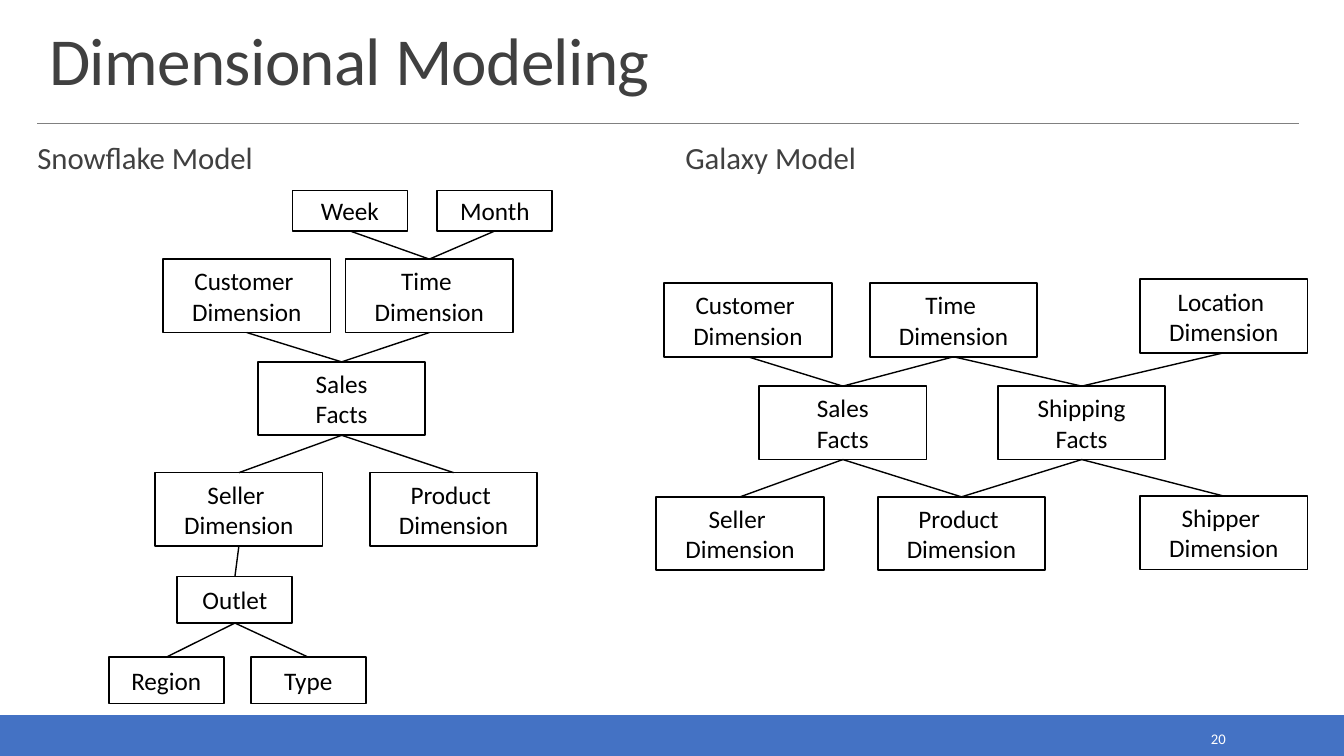
from lxml import etree
from pptx import Presentation
from pptx import util as u
from pptx.dml.color import RGBColor
from pptx.enum import shapes, text
from pptx.oxml.ns import qn

COMPARISON_LAYOUT = 4
WIDE = (4.22, 1.85)
SHORT = (2.9, 1.02)
TALL = (2.9, 1.17)

SNOWFLAKE_BOXES = {
    "Week": (7.37, 4.8, SHORT),
    "Month": (11.02, 4.8, SHORT),
    "Customer \nDimension": (4.11, 6.53, WIDE),
    "Time \nDimension": (8.71, 6.53, WIDE),
    "Sales\nFacts": (6.5, 9.12, WIDE),
    "Seller \nDimension": (3.91, 11.91, WIDE),
    "Product \nDimension": (9.32, 11.91, WIDE),
    "Outlet": (4.47, 14.53, TALL),
    "Region": (2.74, 16.56, TALL),
    "Type": (6.32, 16.56, TALL),
}
SNOWFLAKE_LINKS = [
    ("Week", "Time"), ("Month", "Time"),
    ("Customer", "Sales"), ("Time", "Sales"),
    ("Sales", "Seller"), ("Sales", "Product"),
    ("Seller", "Outlet"), ("Outlet", "Region"), ("Outlet", "Type"),
]
GALAXY_BOXES = {
    "Customer \nDimension": (16.74, 7.14, WIDE),
    "Time \nDimension": (21.92, 7.14, WIDE),
    "Location \nDimension": (28.73, 7.04, WIDE),
    "Sales\nFacts": (19.13, 9.73, WIDE),
    "Shipping\nFacts": (25.15, 9.73, WIDE),
    "Seller \nDimension": (16.54, 12.52, WIDE),
    "Product \nDimension": (22.12, 12.52, WIDE),
    "Shipper \nDimension": (28.73, 12.5, WIDE),
}
GALAXY_LINKS = [
    ("Customer", "Sales"), ("Time", "Sales"),
    ("Time", "Shipping"), ("Location", "Shipping"),
    ("Sales", "Seller"), ("Sales", "Product"),
    ("Shipping", "Product"), ("Shipping", "Shipper"),
]


def colour(value):
    return RGBColor.from_string(value)


class SlideBuilder:
    font = "Calibri"
    ink = "000000"
    heading = "404040"
    accent = "4472C4"
    rule_grey = "808080"
    white = "FFFFFF"

    def __init__(self, slide):
        self.slide = slide

    def place(self, shape, left, top, width, height):
        shape.left, shape.top = u.Cm(left), u.Cm(top)
        shape.width, shape.height = u.Cm(width), u.Cm(height)

    def set_words(self, shape, words, size, hue, align, anchor):
        frame = shape.text_frame
        frame.word_wrap = True
        frame.auto_size = text.MSO_AUTO_SIZE.NONE
        frame.vertical_anchor = anchor
        para = frame.paragraphs[0]
        para.text = words
        para.alignment = align
        para.font.name = self.font
        para.font.size = u.Pt(size)
        para.font.bold = False
        para.font.color.rgb = colour(hue)
        return para

    def title(self, words):
        shape = self.slide.shapes.title
        self.place(shape, 0.99, 0.51, 31.8, 2.13)
        para = self.set_words(shape, words, 48, self.heading,
                              text.PP_ALIGN.LEFT, text.MSO_ANCHOR.BOTTOM)
        para.line_spacing = 0.85
        for span in para.runs:
            span._r.get_or_add_rPr().set("spc", "-50")

    def subtitle(self, index, words, left, width):
        shape = self.slide.placeholders[index]
        self.place(shape, left, 3.51, width, 1.02)
        para = self.set_words(shape, words, 22, self.heading,
                              text.PP_ALIGN.LEFT, text.MSO_ANCHOR.TOP)
        para.line_spacing = 0.9
        para.space_before = u.Pt(0)
        para.space_after = u.Pt(2)
        frame = shape.text_frame
        frame.margin_left = frame.margin_right = 0
        frame.margin_top = frame.margin_bottom = u.Cm(0.1)

    def rectangle(self, left, top, width, height, line):
        box = self.slide.shapes.add_shape(
            shapes.MSO_SHAPE.RECTANGLE,
            u.Cm(left), u.Cm(top), u.Cm(width), u.Cm(height))
        box.shadow.inherit = False
        box.line.color.rgb = colour(line)
        box.line.width = u.Pt(1.25)
        return box

    def footer(self, number):
        band = self.rectangle(0, 18.03, 33.87, 1.02, self.accent)
        band.fill.solid()
        band.fill.fore_color.rgb = colour(self.accent)
        label = self.slide.shapes.add_textbox(
            u.Cm(27.51), u.Cm(18.26), u.Cm(3.63), u.Cm(0.71))
        self.set_words(label, number, 10.5, self.white,
                       text.PP_ALIGN.RIGHT, text.MSO_ANCHOR.MIDDLE)

    def line(self, start, end, hue, width):
        connector = self.slide.shapes.add_connector(
            shapes.MSO_CONNECTOR.STRAIGHT,
            *(u.Cm(value) for value in (*start, *end)))
        connector.line.color.rgb = colour(hue)
        connector.line.width = u.Pt(width)
        etree.SubElement(connector._element.spPr, qn("a:effectLst"))
        return connector

    def entity(self, words, left, top, size):
        box = self.rectangle(left, top, *size, self.ink)
        box.fill.background()
        self.set_words(box, words, 18, self.ink,
                       text.PP_ALIGN.CENTER, text.MSO_ANCHOR.MIDDLE)
        return box

    def link(self, upper, lower):
        connector = self.line((0, 0), (0, 0), self.ink, 1)
        connector.begin_connect(upper, 2)
        connector.end_connect(lower, 0)

    def model(self, entities, links):
        boxes = {words.split()[0]: self.entity(words, *position)
                 for words, position in entities.items()}
        for upper, lower in links:
            self.link(boxes[upper], boxes[lower])


def main():
    deck = Presentation()
    deck.slide_width, deck.slide_height = u.Cm(33.87), u.Cm(19.05)
    page = deck.slides.add_slide(deck.slide_layouts[COMPARISON_LAYOUT])
    for index in (2, 4):
        unused = page.placeholders[index]._element
        unused.getparent().remove(unused)

    builder = SlideBuilder(page)
    builder.footer("20")
    builder.line((0.94, 3.12), (32.74, 3.12), builder.rule_grey, 0.5)
    builder.title("Dimensional Modeling")
    builder.subtitle(1, "Snowflake Model", 0.94, 15.82)
    builder.subtitle(3, "Galaxy Model", 17.27, 15.47)
    builder.model(SNOWFLAKE_BOXES, SNOWFLAKE_LINKS)
    builder.model(GALAXY_BOXES, GALAXY_LINKS)
    deck.save("out.pptx")


if __name__ == "__main__":
    main()
